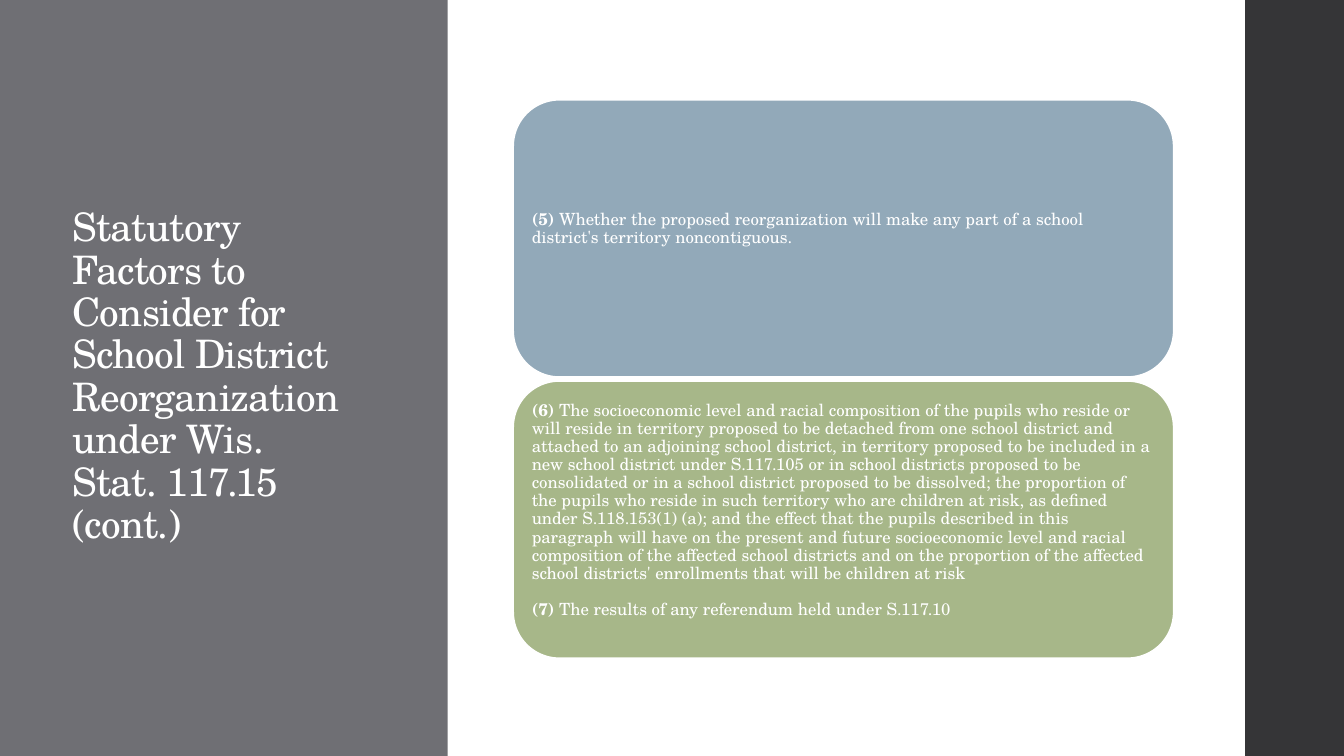
import pptx
import pptx.util
from pptx.dml.color import RGBColor
from pptx.enum.shapes import MSO_SHAPE
from pptx.enum.text import MSO_ANCHOR, PP_ALIGN
from pptx.util import Inches

FONT = "TeX Gyre Schola"
WHITE = RGBColor(0xFF, 0xFF, 0xFF)
GRAY = RGBColor(0x6F, 0x6F, 0x74)
CHARCOAL = RGBColor(0x35, 0x35, 0x37)
BLUE = RGBColor(0x92, 0xA9, 0xB9)
GREEN = RGBColor(0xA7, 0xB7, 0x89)

TITLE = ("Statutory Factors to Consider for School District "
         "Reorganization under Wis. Stat. 117.15 (cont.)")
CARDS = [
    (BLUE, [
        ("(5)", "Whether the proposed reorganization will make any part of a "
                "school district's territory noncontiguous."),
    ]),
    (GREEN, [
        ("(6)", "The socioeconomic level and racial composition of the pupils "
                "who reside or will reside in territory proposed to be detached "
                "from one school district and attached to an adjoining school "
                "district, in territory proposed to be included in a new school "
                "district under S.117.105 or in school districts proposed to be "
                "consolidated or in a school district proposed to be dissolved; "
                "the proportion of the pupils who reside in such territory who "
                "are children at risk, as defined under S.118.153(1) (a); and "
                "the effect that the pupils described in this paragraph will "
                "have on the present and future socioeconomic level and racial "
                "composition of the affected school districts and on the "
                "proportion of the affected school districts' enrollments that "
                "will be children at risk"),
        ("(7)", "The results of any referendum held under S.117.10"),
    ]),
]


def add_block(slide, kind, color, x, y, w, h):
    """Add a flat filled shape without outline, sized in inches."""
    sp = slide.shapes.add_shape(kind, Inches(x), Inches(y), Inches(w), Inches(h))
    sp.shadow.inherit = False
    sp.fill.solid()
    sp.fill.fore_color.rgb = color
    sp.line.fill.background()
    return sp


def style_paragraph(p, size):
    """Set the shared white serif style on a paragraph."""
    p.alignment = PP_ALIGN.LEFT
    p.line_spacing = 0.9
    p.font.name = FONT
    p.font.size = pptx.util.Pt(size)
    p.font.color.rgb = WHITE


def add_title_panel(slide, x, y, w, h):
    """Draw the gray panel and the slide title on it."""
    add_block(slide, MSO_SHAPE.RECTANGLE, GRAY, x, y, w, h)
    box = slide.shapes.add_textbox(Inches(x + 0.62), Inches(y + 0.91),
                                   Inches(2.97), Inches(h - 1.83))
    tf = box.text_frame
    tf.word_wrap = True
    tf.vertical_anchor = MSO_ANCHOR.MIDDLE
    p = tf.paragraphs[0]
    style_paragraph(p, 28)
    r = p.add_run()
    r.text = TITLE
    r._r.get_or_add_rPr().set("spc", "-50")


def add_card(slide, color, factors, x, y, w, h):
    """Draw one rounded card listing numbered factors."""
    sp = add_block(slide, MSO_SHAPE.ROUNDED_RECTANGLE, color, x, y, w, h)
    sp.line.color.rgb = WHITE
    sp.line.width = pptx.util.Pt(1.1)
    tf = sp.text_frame
    tf.word_wrap = True
    tf.vertical_anchor = MSO_ANCHOR.MIDDLE
    tf.margin_left = tf.margin_right = tf.margin_top = Inches(0.05)
    tf.margin_bottom = Inches(0.23)
    for i, (number, text) in enumerate(factors):
        p = tf.add_paragraph() if i else tf.paragraphs[0]
        style_paragraph(p, 12)
        if i:
            p.space_before = pptx.util.Pt(13)
        r = p.add_run()
        r.text = number
        r.font.bold = True
        p.add_run().text = " " + text


def add_cards(slide, x, y, w, h, gap):
    """Stack the cards evenly in the given box."""
    card_h = (h - gap * (len(CARDS) - 1)) / len(CARDS)
    for i, (color, factors) in enumerate(CARDS):
        add_card(slide, color, factors, x, y + i * (card_h + gap), w, card_h)


def main():
    """Build and save the slide."""
    prs = pptx.Presentation()
    prs.slide_width = Inches(13.33)
    prs.slide_height = Inches(7.5)
    s = prs.slides.add_slide(prs.slide_layouts[6])
    add_title_panel(s, 0, 0, 4.44, 7.5)
    add_block(s, MSO_SHAPE.RECTANGLE, CHARCOAL, 12.35, 0, 0.98, 7.5)
    add_cards(s, 5.09, 0.99, 6.55, 5.54, 0.04)
    prs.save("out.pptx")


if __name__ == "__main__":
    main()
